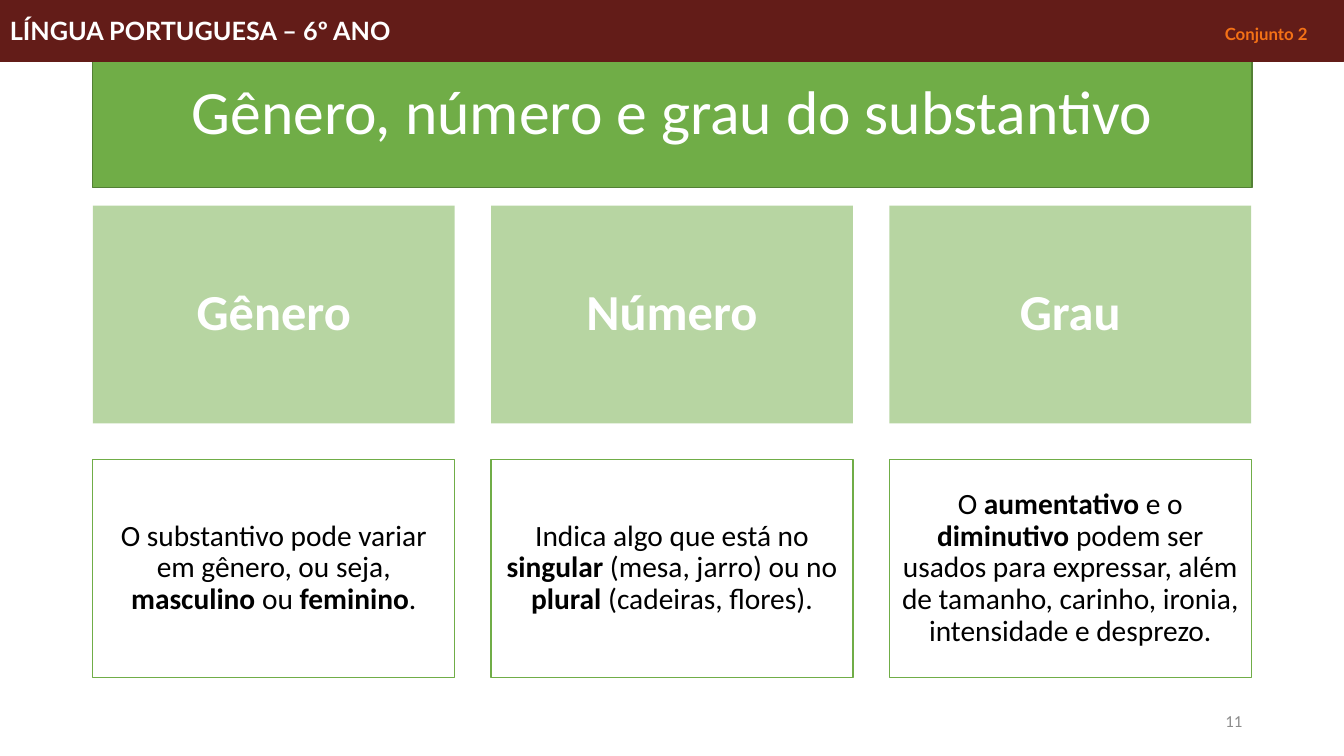
"""Builds a Portuguese lesson slide on gender, number and degree of nouns."""
from lxml import etree
from pptx import Presentation
from pptx.dml.color import RGBColor
from pptx.enum import shapes, text
from pptx.oxml import ns
from pptx.util import Inches, Pt


def color(value):
    return RGBColor.from_string(value)


def block(place, words, size, ink, fill=None, line=None, width=1, inset=0.1,
          align=text.PP_ALIGN.CENTER, font="Calibri", spacing=0.9):
    """Add a rectangle with one paragraph; ** in the words switches bold."""
    box = slide.shapes.add_shape(shapes.MSO_SHAPE.RECTANGLE, *map(Inches, place))
    box.shadow.inherit = False
    if fill:
        box.fill.solid()
        box.fill.fore_color.rgb = color(fill)
    else:
        box.fill.background()
    if line:
        box.line.color.rgb = color(line)
        box.line.width = Pt(width)
    else:
        box.line.fill.background()
    frame = box.text_frame
    frame.word_wrap = True
    frame.vertical_anchor = text.MSO_ANCHOR.MIDDLE
    frame.margin_left = frame.margin_right = Inches(inset)
    frame.margin_top = frame.margin_bottom = Inches(min(inset, 0.15) if inset != 0.1 else 0.05)
    paragraph = frame.paragraphs[0]
    paragraph.alignment = align
    paragraph.line_spacing = spacing
    paragraph.font.name = font
    paragraph.font.size = Pt(size)
    paragraph.font.color.rgb = color(ink)
    for index, part in enumerate(words.split("**")):
        if part:
            run = paragraph.add_run()
            run.text = part
            run.font.bold = index % 2 == 1
            run.font.color.rgb = color(ink)
    return box


GREEN, WHITE, MAROON = "70AD47", "FFFFFF", "631C18"
LEFT, STEP, CARD_WIDTH, CARD_HEIGHT = 0.92, 3.95, 3.59, 2.16

topics = [
    ("Gênero", "O substantivo pode variar em gênero, ou seja, **masculino** ou **feminino**."),
    ("Número", "Indica algo que está no **singular** (mesa, jarro) ou no **plural** (cadeiras, flores)."),
    ("Grau", "O **aumentativo** e o **diminutivo** podem ser usados para expressar, além de tamanho, "
             "carinho, ironia, intensidade e desprezo."),
]

deck = Presentation()
deck.slide_width, deck.slide_height = Inches(13.33), Inches(7.5)
slide = deck.slides.add_slide(deck.slide_layouts[6])

for column, (topic, explanation) in enumerate(topics):
    left = LEFT + column * STEP
    heading = block((left, 2.04, CARD_WIDTH, CARD_HEIGHT), f"**{topic}**", 36, WHITE, GREEN, inset=0.15)
    tint = heading.fill._xPr.find(ns.qn("a:solidFill"))[0]
    etree.SubElement(tint, ns.qn("a:alpha"), val="50000")
    block((left, 4.56, CARD_WIDTH, CARD_HEIGHT), explanation, 21, "000000", WHITE, GREEN, inset=0.09)

block((9.42, 6.95, 3, 0.4), "11", 12, "8C8C8C", align=text.PP_ALIGN.RIGHT, spacing=1)
block((LEFT, 0.41, 11.5, 1.45), "Gênero, número e grau do substantivo", 44, WHITE, GREEN, "538035")

header = block((0, 0, 13.33, 0.61), "**LÍNGUA PORTUGUESA – 6º ANO\t**", 18, WHITE, MAROON, MAROON, 0.75,
               align=text.PP_ALIGN.LEFT, font="Lato", spacing=1)
header_line = header.text_frame.paragraphs[0]
set_label = header_line.add_run()
set_label.text = "Conjunto 2"
set_label.font.size = Pt(12)
set_label.font.bold = True
set_label.font.color.rgb = color("F47116")
tabs = etree.Element(ns.qn("a:tabLst"))
etree.SubElement(tabs, ns.qn("a:tab"), pos=str(Inches(12.05)), algn="l")
header_line._p.pPr.find(ns.qn("a:defRPr")).addprevious(tabs)

deck.save("out.pptx")
